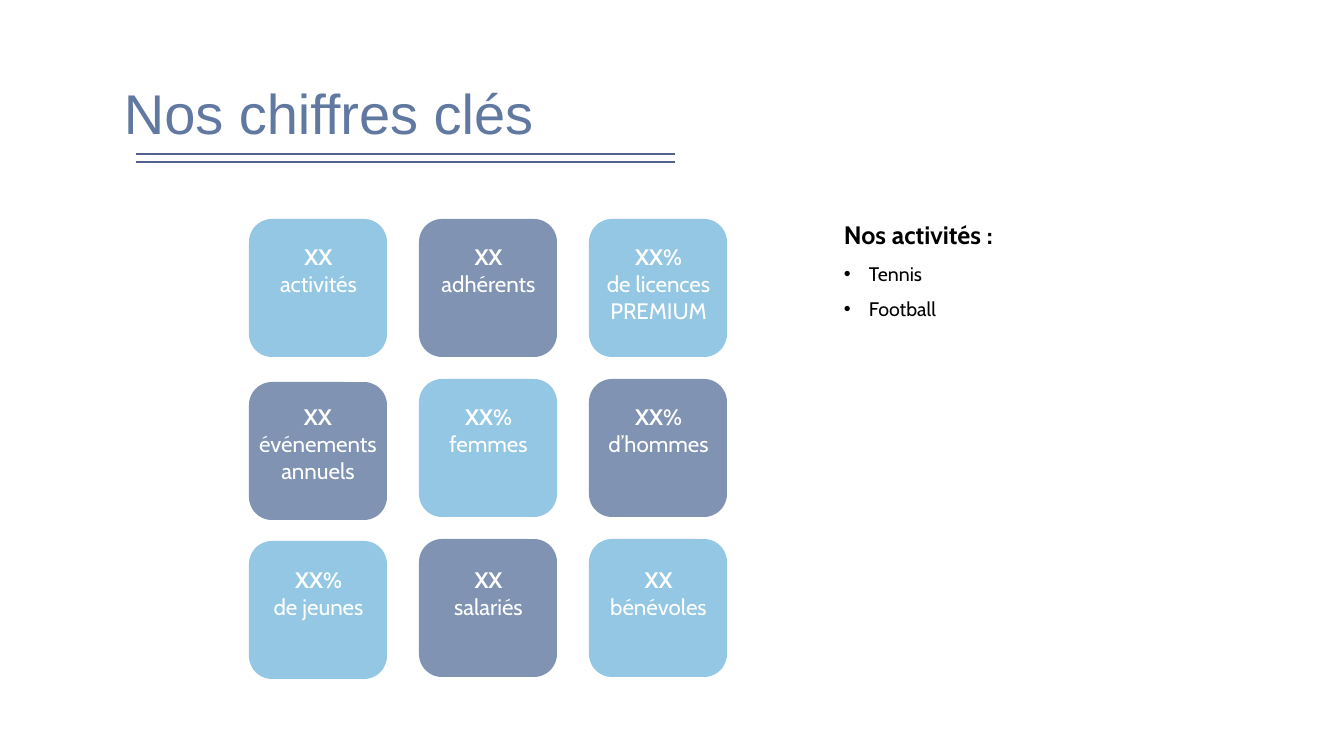
from dataclasses import dataclass

from lxml import etree
from pptx import Presentation
from pptx import util as u
from pptx.dml.color import RGBColor
from pptx.enum import shapes, text
from pptx.oxml import ns

EMU_PER_PX = 914400 / 100.8


@dataclass(frozen=True)
class Theme:
    title: RGBColor = RGBColor.from_string("6178A1")
    rule: RGBColor = RGBColor.from_string("53618E")
    sky: RGBColor = RGBColor.from_string("79BADD")
    slate: RGBColor = RGBColor.from_string("6178A1")
    black: RGBColor = RGBColor.from_string("000000")
    white: RGBColor = RGBColor.from_string("FFFFFF")
    title_font: str = "Arial"
    body_font: str = "Cabin"
    title_size: int = 40
    heading_size: int = 18
    figure_size: int = 16
    item_size: int = 14
    tile_opacity: int = 80


THEME = Theme()

# Grid of key figures
TILE_SIZE = 138
GRID_LEFT, GRID_TOP = 249, 219
COLUMN_PITCH, ROW_PITCH = 170, 160
LABEL_TOPS = (243, 403, 566)
LABEL_WIDTH, LABEL_HEIGHT = 111, 74
WIDE_LABELS = {"événements annuels": 142}
TILE_DROPS = {(1, 0): 3, (2, 0): 2}
FIGURES = (
    (("XX", "activités"), ("XX", "adhérents"), ("XX%", "de licences PREMIUM")),
    (("XX", "événements annuels"), ("XX%", "femmes"), ("XX%", "d’hommes")),
    (("XX%", "de jeunes"), ("XX", "salariés"), ("XX", "bénévoles")),
)
ACTIVITIES = ("Tennis", "Football")


def px(length):
    return u.Emu(round(length * EMU_PER_PX))


def add_box(page, left, top, width, height, margins=True):
    box = page.shapes.add_textbox(px(left), px(top), px(width), px(height))
    frame = box.text_frame
    frame.word_wrap = True
    frame.vertical_anchor = text.MSO_ANCHOR.TOP
    if not margins:
        frame.margin_left = frame.margin_right = 0
        frame.margin_top = frame.margin_bottom = 0
    return frame


def style(para, font, size, color, bold=False):
    para.font.name = font
    para.font.size = u.Pt(size)
    para.font.bold = bold
    para.font.color.rgb = color


def add_bullet(para, indent):
    properties = para._p.get_or_add_pPr()
    properties.set("marL", str(px(indent)))
    properties.set("indent", str(-px(indent)))
    etree.SubElement(properties, ns.qn("a:buFont"), typeface="Arial")
    etree.SubElement(properties, ns.qn("a:buChar"), char="•")


def add_title(page, words):
    para = add_box(page, 114, 81, 863, 89).paragraphs[0]
    para.text = words
    para.line_spacing = 0.9
    style(para, THEME.title_font, THEME.title_size, THEME.title)


def add_rule(page, left, right, y):
    rule = page.shapes.add_connector(
        shapes.MSO_CONNECTOR.STRAIGHT, px(left), px(y), px(right), px(y))
    rule.line.color.rgb = THEME.rule
    rule.line.width = u.Pt(1)
    etree.SubElement(rule._element.spPr, ns.qn("a:effectLst"))


def add_tile(page, left, top, color):
    tile = page.shapes.add_shape(
        shapes.MSO_SHAPE.ROUNDED_RECTANGLE,
        px(left), px(top), px(TILE_SIZE), px(TILE_SIZE))
    tile.shadow.inherit = False
    tile.fill.solid()
    tile.fill.fore_color.rgb = color
    tile.line.fill.background()
    fill_color = tile._element.spPr.find(".//" + ns.qn("a:srgbClr"))
    etree.SubElement(fill_color, ns.qn("a:alpha"), val=str(THEME.tile_opacity * 1000))


def add_label(page, center, top, number, caption):
    width = WIDE_LABELS.get(caption, LABEL_WIDTH)
    frame = add_box(page, center - width // 2, top, width, LABEL_HEIGHT, margins=False)
    for para, words, bold in ((frame.paragraphs[0], number, True),
                              (frame.add_paragraph(), caption, False)):
        para.text = words
        para.alignment = text.PP_ALIGN.CENTER
        style(para, THEME.body_font, THEME.figure_size, THEME.white, bold)


def add_figures(page):
    for row, figures in enumerate(FIGURES):
        for column, (number, caption) in enumerate(figures):
            left = GRID_LEFT + column * COLUMN_PITCH
            top = GRID_TOP + row * ROW_PITCH + TILE_DROPS.get((row, column), 0)
            color = THEME.slate if (row + column) % 2 else THEME.sky
            add_tile(page, left, top, color)
            add_label(page, left + TILE_SIZE // 2, LABEL_TOPS[row], number, caption)


def add_activities(page, heading, items):
    frame = add_box(page, 834, 218, 322, 384)
    para = frame.paragraphs[0]
    para.text = heading
    para.line_spacing = 0.9
    style(para, THEME.body_font, THEME.heading_size, THEME.black, bold=True)
    for item in items:
        para = frame.add_paragraph()
        para.text = item
        para.line_spacing = 0.9
        para.space_before = u.Pt(10)
        add_bullet(para, 25)
        style(para, THEME.body_font, THEME.item_size, THEME.black)


def main():
    deck = Presentation()
    deck.slide_width, deck.slide_height = px(1344), px(756)
    page = deck.slides.add_slide(deck.slide_layouts[6])

    # Title with its double rule
    add_title(page, "Nos chiffres clés")
    for y in (154, 162):
        add_rule(page, 136, 675, y)

    # Key figures and list of activities
    add_figures(page)
    add_activities(page, "Nos activités :", ACTIVITIES)

    deck.save("out.pptx")


if __name__ == "__main__":
    main()
